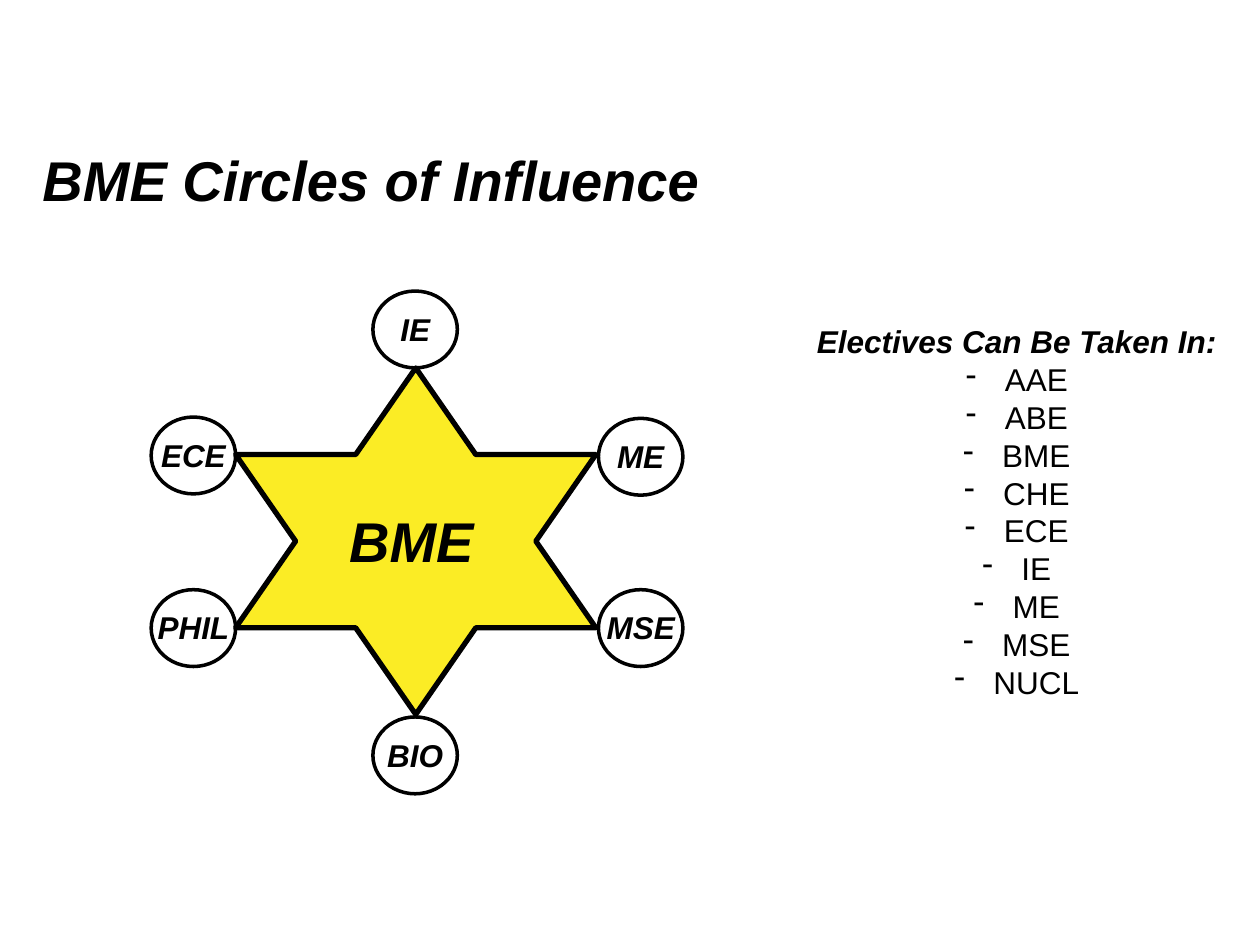
"""Build the BME circles of influence slide."""
from lxml.etree import SubElement
from pptx import Presentation
from pptx.dml.color import RGBColor as RGB
from pptx.enum.shapes import MSO_SHAPE as Shape
from pptx.enum.text import PP_ALIGN as Align
from pptx.oxml.ns import qn
from pptx.util import Inches, Pt

COLORS = {"ink": "000000", "paper": "FFFFFF", "star": "FBEC25"}
FIELDS = [
    ("MSE", 4.75, 4.68), ("BIO", 2.96, 5.69), ("PHIL", 1.2, 4.68),
    ("ECE", 1.2, 3.31), ("ME", 4.75, 3.32), ("IE", 2.96, 2.31),
]
COURSES = ["AAE", "ABE", "BME", "CHE", "ECE", "IE", "ME", "MSE", "NUCL"]


def color(name):
    return RGB.from_string(COLORS[name])


def add_form(slide, kind, box, fill, width):
    form = slide.shapes.add_shape(kind, *map(Inches, box))
    form.shadow.inherit = False
    form.fill.solid()
    form.fill.fore_color.rgb = color(fill)
    form.line.color.rgb = color("ink")
    form.line.width = Pt(width)


def add_run(para, text, size, strong=True):
    para.alignment = Align.CENTER
    run = para.add_run()
    run.text = text
    font = run.font
    font.name, font.size = "Arial", Pt(size)
    font.bold = font.italic = strong
    font.color.rgb = color("ink")


def add_text(slide, text, box, size):
    frame = slide.shapes.add_textbox(*map(Inches, box)).text_frame
    frame.word_wrap = True
    add_run(frame.paragraphs[0], text, size)
    return frame


def add_item(frame, text):
    para = frame.add_paragraph()
    para.line_spacing = Pt(21.6)
    props = para._p.get_or_add_pPr()
    props.set("marL", str(Inches(0.31)))
    props.set("indent", str(Inches(-0.31)))
    SubElement(props, qn("a:buChar"), char="-")
    add_run(para, text, 18, strong=False)


def main():
    deck = Presentation()
    deck.slide_width, deck.slide_height = Inches(10), Inches(7.5)
    slide = deck.slides.add_slide(deck.slide_layouts[6])
    for name, left, top in FIELDS:
        add_form(slide, Shape.OVAL, (left, top, 0.67, 0.61), "paper", 2)
    add_text(slide, "BME Circles of Influence", (0.17, 1.11, 5.55, 0.64), 32)
    add_form(slide, Shape.STAR_6_POINT, (1.87, 2.92, 2.86, 2.75), "star", 3)
    for name, left, top in FIELDS:
        add_text(slide, name, (left - 0.29, top + 0.1, 1.25, 0.42), 18)
    add_text(slide, "BME", (2.64, 3.97, 1.25, 0.64), 32)
    panel = add_text(slide, "Electives Can Be Taken In:",
                     (6.28, 2.51, 3.58, 3.43), 18)
    for course in COURSES:
        add_item(panel, course)
    deck.save("out.pptx")


if __name__ == "__main__":
    main()
